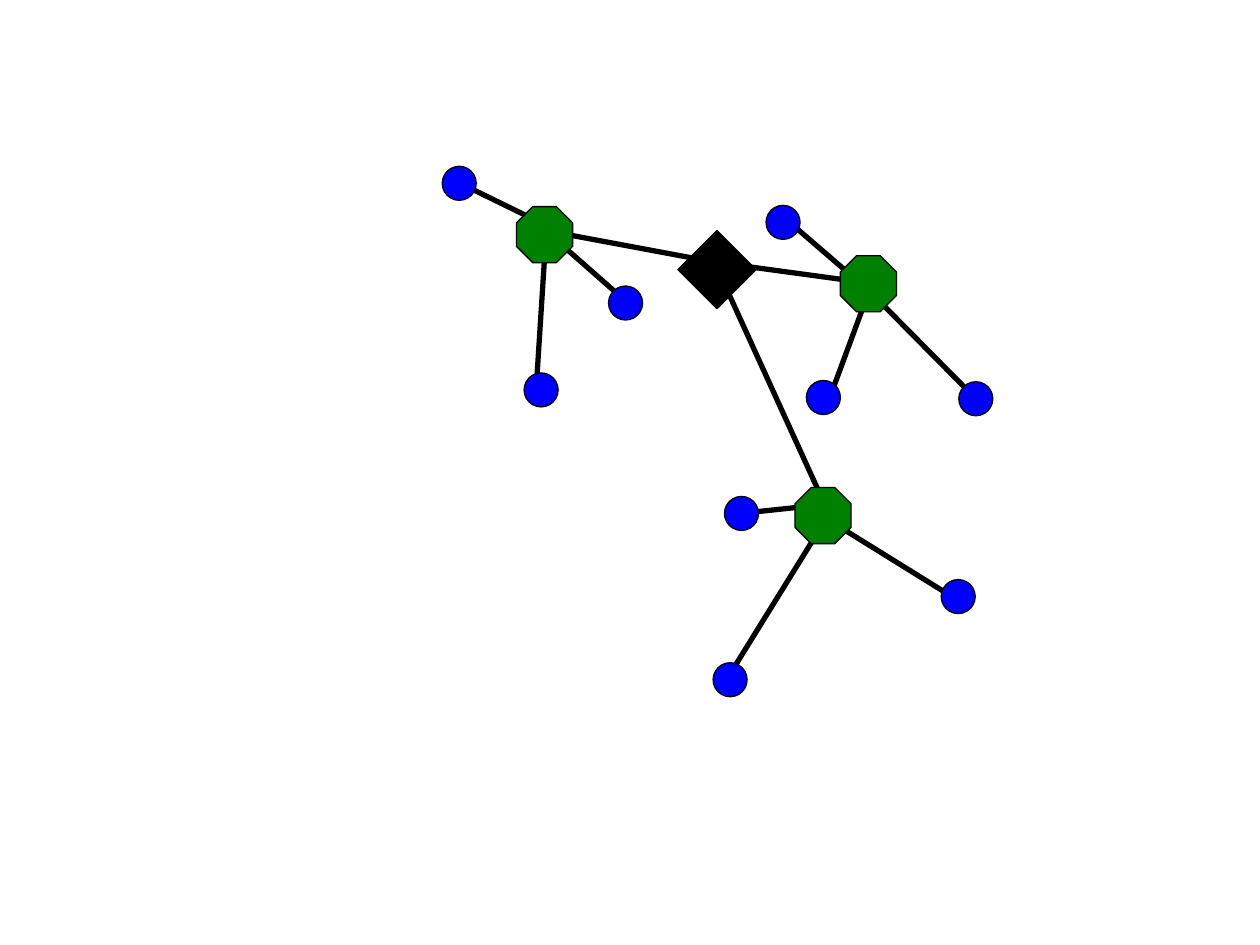
"""Draw a tree network: a root diamond, three hubs and their leaves."""
from typing import NamedTuple

from lxml.etree import SubElement
from pptx import Presentation
from pptx.dml.color import RGBColor
from pptx.enum.shapes import MSO_CONNECTOR as Wire, MSO_SHAPE as Kind
from pptx.oxml.ns import qn
from pptx.util import Inches, Pt


class Link(NamedTuple):
    x1: float
    y1: float
    x2: float
    y2: float


class Style(NamedTuple):
    kind: Kind
    size: float
    fill: str


class Node(NamedTuple):
    style: Style
    left: float
    top: float


LEAF = Style(Kind.FLOWCHART_CONNECTOR, 0.27, "0000FF")
HUB = Style(Kind.OCTAGON, 0.445, "008000")
ROOT = Style(Kind.DIAMOND, 0.62, "000000")

LINKS = [
    Link(6.25, 1.75, 6.83, 2.25),
    Link(6.92, 2.25, 6.58, 3.17),
    Link(6.92, 2.33, 7.75, 3.17),
    Link(5.83, 4.08, 6.58, 4),
    Link(6.58, 4.08, 5.75, 5.42),
    Link(6.5, 4.08, 7.58, 4.75),
    Link(3.58, 1.42, 4.42, 1.83),
    Link(4.33, 1.83, 5, 2.42),
    Link(4.33, 1.92, 4.25, 3.17),
    Link(4.33, 1.83, 5.67, 2.08),
    Link(6.92, 2.25, 5.67, 2.08),
    Link(6.58, 4.08, 5.67, 2.08),
]
NODES = [
    Node(LEAF, 4.16, 2.96),
    Node(ROOT, 5.38, 1.83),
    Node(LEAF, 5.75, 3.94),
    Node(LEAF, 5.66, 5.26),
    Node(LEAF, 7.47, 4.6),
    Node(LEAF, 7.61, 3.03),
    Node(HUB, 6.31, 3.87),
    Node(HUB, 6.67, 2.03),
    Node(HUB, 4.1, 1.64),
    Node(LEAF, 4.83, 2.27),
    Node(LEAF, 3.51, 1.32),
    Node(LEAF, 6.08, 1.63),
    Node(LEAF, 6.4, 3.02),
]


def paint(fill, color: str) -> None:
    fill.solid()
    fill.fore_color.rgb = RGBColor.from_string(color)


def draw_link(shapes, link: Link) -> None:
    wire = shapes.add_connector(Wire.STRAIGHT, *map(Inches, link))
    paint(wire.line.fill, "000000")
    wire.line.width = Pt(3)
    SubElement(wire._element.spPr, qn("a:effectLst"))


def draw_node(shapes, node: Node) -> None:
    kind, size, color = node.style
    box = map(Inches, (node.left, node.top, size, size))
    shape = shapes.add_shape(kind, *box)
    shape.shadow.inherit = False
    paint(shape.fill, color)
    paint(shape.line.fill, "000000")
    shape.line.width = Pt(0.75)
    if kind == Kind.OCTAGON:
        shape.adjustments[0] = 0.29


def main() -> None:
    deck = Presentation()
    deck.slide_width, deck.slide_height = Inches(10), Inches(7.5)
    shapes = deck.slides.add_slide(deck.slide_layouts[6]).shapes
    for link in LINKS:
        draw_link(shapes, link)
    for node in NODES:
        draw_node(shapes, node)
    deck.save("out.pptx")


if __name__ == "__main__":
    main()
